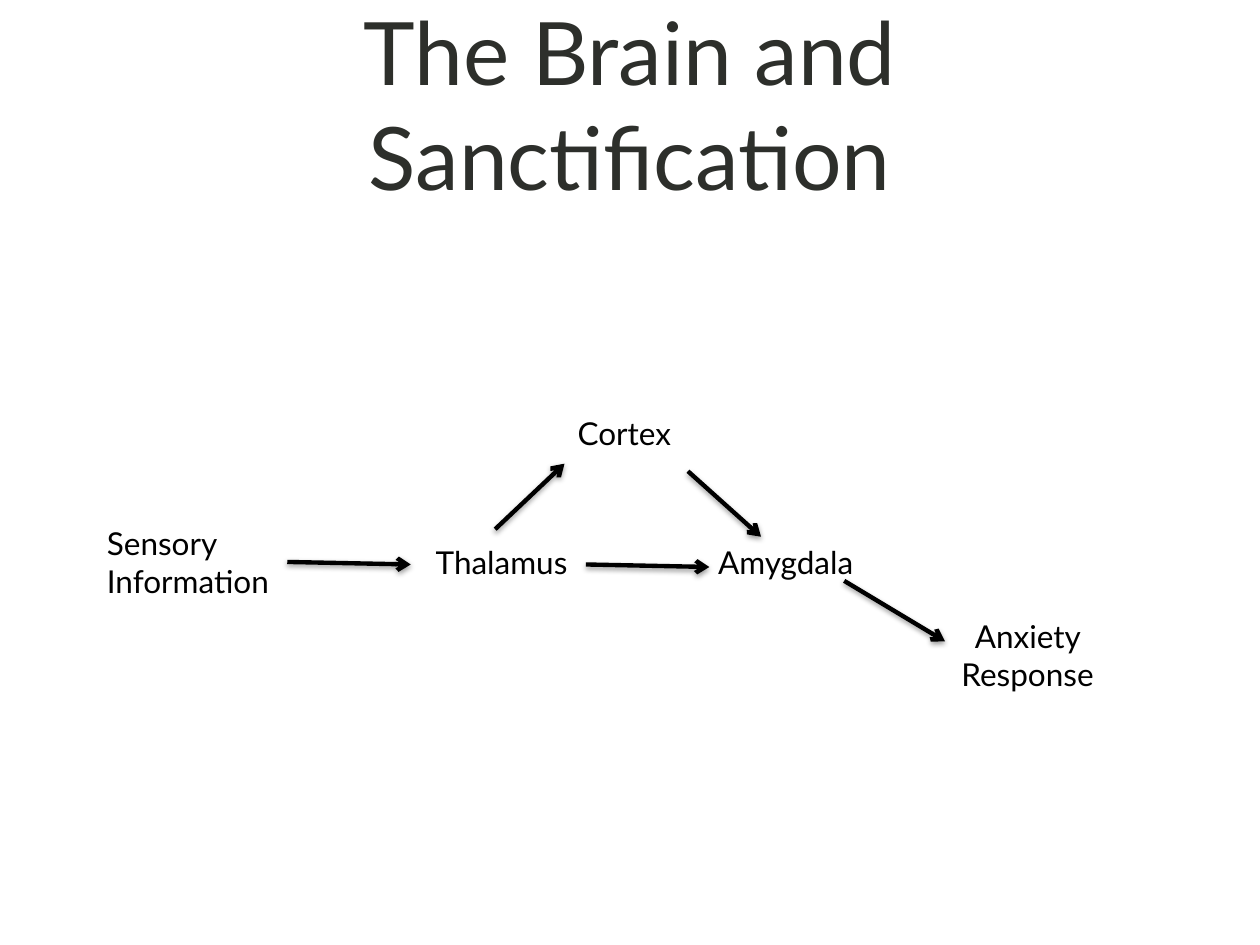
from lxml import etree
from pptx import Presentation
from pptx.dml.color import RGBColor
from pptx.enum import shapes, text
from pptx.oxml import ns
from pptx.util import Inches, Pt

FONT = "Lato"
BLACK = "000000"
LABEL_WIDTH = 1.59
LEFT, CENTER = text.PP_ALIGN.LEFT, text.PP_ALIGN.CENTER

LABELS = [
    (["Sensory", "Information"], 0.75, 4.11, 0.71, LEFT),
    (["Thalamus"], 3.36, 4.26, 0.4, LEFT),
    (["Cortex"], 4.16, 3.24, 0.4, CENTER),
    (["Amygdala"], 5.44, 4.26, 0.4, CENTER),
    (["Anxiety Response"], 7.36, 4.85, 0.71, CENTER),
]
ARROWS = [
    (2.28, 4.46, 3.26, 4.48),
    (3.93, 4.2, 4.48, 3.68),
    (4.65, 4.48, 5.63, 4.5),
    (5.46, 3.74, 6.04, 4.26),
    (6.7, 4.61, 7.5, 5.09),
]


def color(value):
    """Return the colour for a hex string."""
    return RGBColor.from_string(value)


def format_paragraph(paragraph, size, value, alignment):
    """Set the font and alignment of a paragraph."""
    paragraph.alignment = alignment
    paragraph.font.name = FONT
    paragraph.font.size = Pt(size)
    paragraph.font.color.rgb = color(value)


def set_title(slide, wording):
    """Fill and place the title placeholder."""
    title = slide.shapes.title
    title.left, title.top = Inches(0.75), Inches(0.07)
    title.width, title.height = Inches(8.5), Inches(1.5)
    frame = title.text_frame
    frame.text = wording
    frame.word_wrap = True
    frame.auto_size = text.MSO_AUTO_SIZE.NONE
    frame.vertical_anchor = text.MSO_ANCHOR.MIDDLE
    format_paragraph(frame.paragraphs[0], 50, "2D2F2B", CENTER)


def add_label(slide, lines, left, top, height, alignment):
    """Add a wrapped label with one paragraph per line."""
    box = slide.shapes.add_textbox(
        Inches(left), Inches(top), Inches(LABEL_WIDTH), Inches(height))
    frame = box.text_frame
    frame.word_wrap = True
    frame.auto_size = text.MSO_AUTO_SIZE.SHAPE_TO_FIT_TEXT
    frame.text = "\n".join(lines)
    for paragraph in frame.paragraphs:
        format_paragraph(paragraph, 18, BLACK, alignment)


def add_shadow(properties):
    """Add a soft shadow straight below a shape."""
    effects = etree.SubElement(properties, ns.qn("a:effectLst"))
    shadow = etree.SubElement(
        effects, ns.qn("a:outerShdw"), blurRad=str(Pt(3.1)),
        dist=str(Pt(1.6)), dir="5400000", rotWithShape="0")
    shade = etree.SubElement(shadow, ns.qn("a:srgbClr"), val=BLACK)
    etree.SubElement(shade, ns.qn("a:alpha"), val="38000")


def add_arrow(slide, *ends):
    """Add a shadowed arrow between two points."""
    arrow = slide.shapes.add_connector(
        shapes.MSO_CONNECTOR.STRAIGHT, *map(Inches, ends))
    arrow.line.color.rgb = color(BLACK)
    arrow.line.width = Pt(2.5)
    properties = arrow._element.spPr
    line = properties.find(ns.qn("a:ln"))
    etree.SubElement(line, ns.qn("a:tailEnd"), type="arrow")
    add_shadow(properties)


def main():
    """Build and save the slide."""
    presentation = Presentation()
    presentation.slide_width = Inches(10)
    presentation.slide_height = Inches(7.5)
    slide = presentation.slides.add_slide(presentation.slide_layouts[5])
    set_title(slide, "The Brain and Sanctification")
    for label in LABELS:
        add_label(slide, *label)
    for ends in ARROWS:
        add_arrow(slide, *ends)
    presentation.save("out.pptx")


if __name__ == "__main__":
    main()
